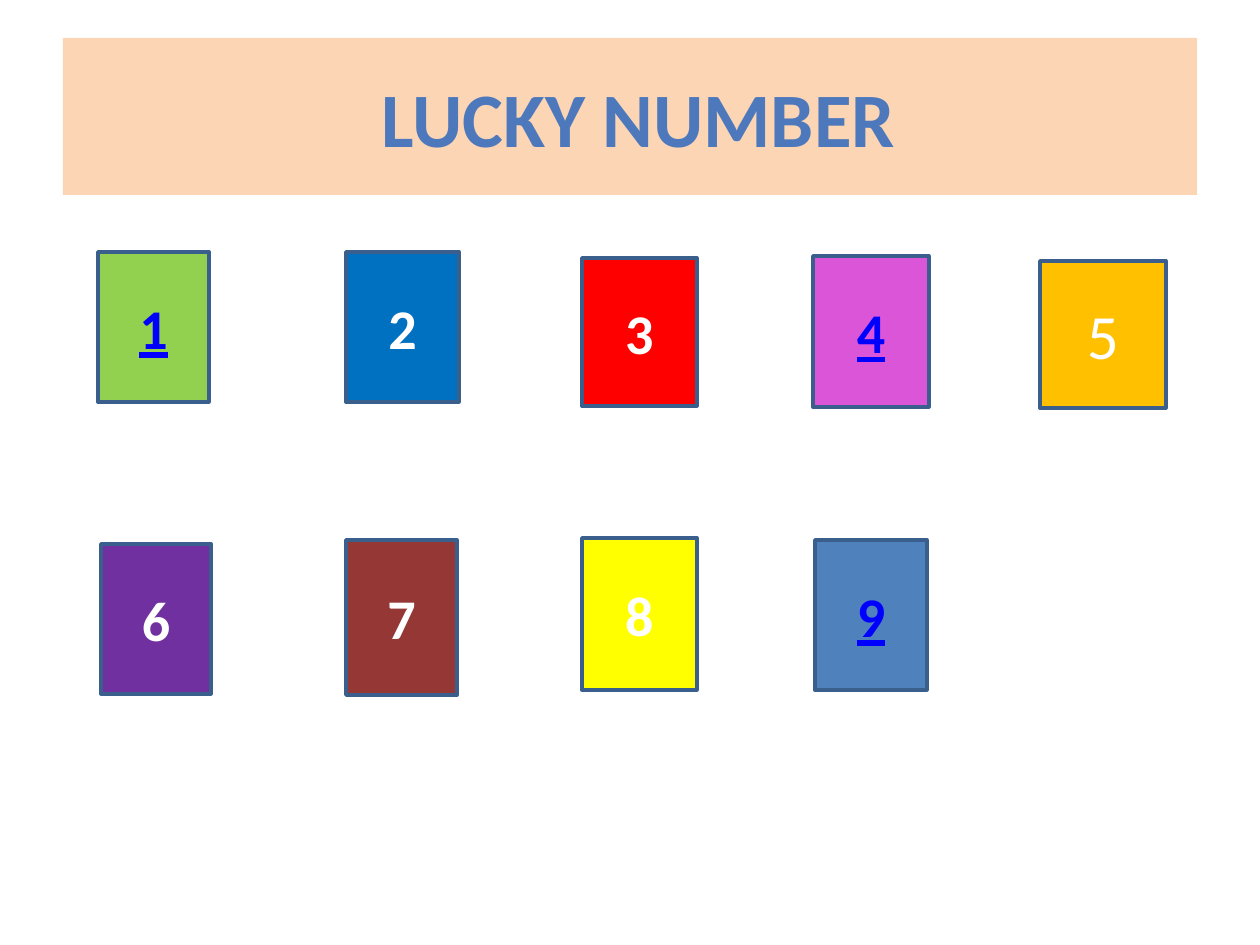
"""Builds the lucky number slide: a title band above nine coloured number cards."""
from pptx import Presentation
from pptx import util as u
from pptx.dml.color import RGBColor
from pptx.enum import shapes, text

PX = u.Inches(1) / 126
FONT, EDGE, WHITE, LINK = "Calibri", "3A5F8C", "FFFFFF", "0000FF"
TITLE = (" LUCKY NUMBER", (63, 38, 1134, 157), "FCD5B5", "4D79BC")
CARDS = [
    ("1", (98, 252, 111, 150), "92D050"),
    ("2", (346, 252, 113, 150), "0070C0"),
    ("3", (582, 258, 115, 148), "FF0000"),
    ("4", (813, 256, 116, 151), "DB55D9"),
    ("5", (1040, 261, 126, 147), "FFC000"),
    ("6", (101, 544, 110, 150), "7030A0"),
    ("7", (346, 540, 111, 155), "953735"),
    ("8", (582, 538, 115, 152), "FFFF00"),
    ("9", (815, 540, 112, 150), "4F81BD"),
]
LINKED = {"1", "4", "9"}
PLAIN = {"5"}


def rgb(code):
    return RGBColor.from_string(code)


def block(slide, words, box, fill, ink, size, bold=True, line=None, under=False):
    shape = slide.shapes.add_shape(
        shapes.MSO_SHAPE.RECTANGLE, *(round(n * PX) for n in box))
    shape.shadow.inherit = False
    shape.fill.solid()
    shape.fill.fore_color.rgb = rgb(fill)
    if line:
        shape.line.color.rgb = rgb(line)
        shape.line.width = u.Pt(2)
    else:
        shape.line.fill.background()
    frame = shape.text_frame
    frame.word_wrap = True
    frame.vertical_anchor = text.MSO_ANCHOR.MIDDLE
    para = frame.paragraphs[0]
    para.alignment = text.PP_ALIGN.CENTER
    run = para.add_run()
    run.text = words
    font = run.font
    font.name, font.size, font.bold = FONT, u.Pt(size), bold
    font.underline = under
    font.color.rgb = rgb(ink)


def main():
    deck = Presentation()
    deck.slide_width, deck.slide_height = u.Inches(10), u.Inches(7.5)
    slide = deck.slides.add_slide(deck.slide_layouts[6])
    block(slide, *TITLE, 44)
    for digit, box, fill in CARDS:
        linked, plain = digit in LINKED, digit in PLAIN
        block(slide, digit, box, fill, LINK if linked else WHITE,
              36 if plain else 32, not plain, EDGE, linked)
    deck.save("out.pptx")


if __name__ == "__main__":
    main()
